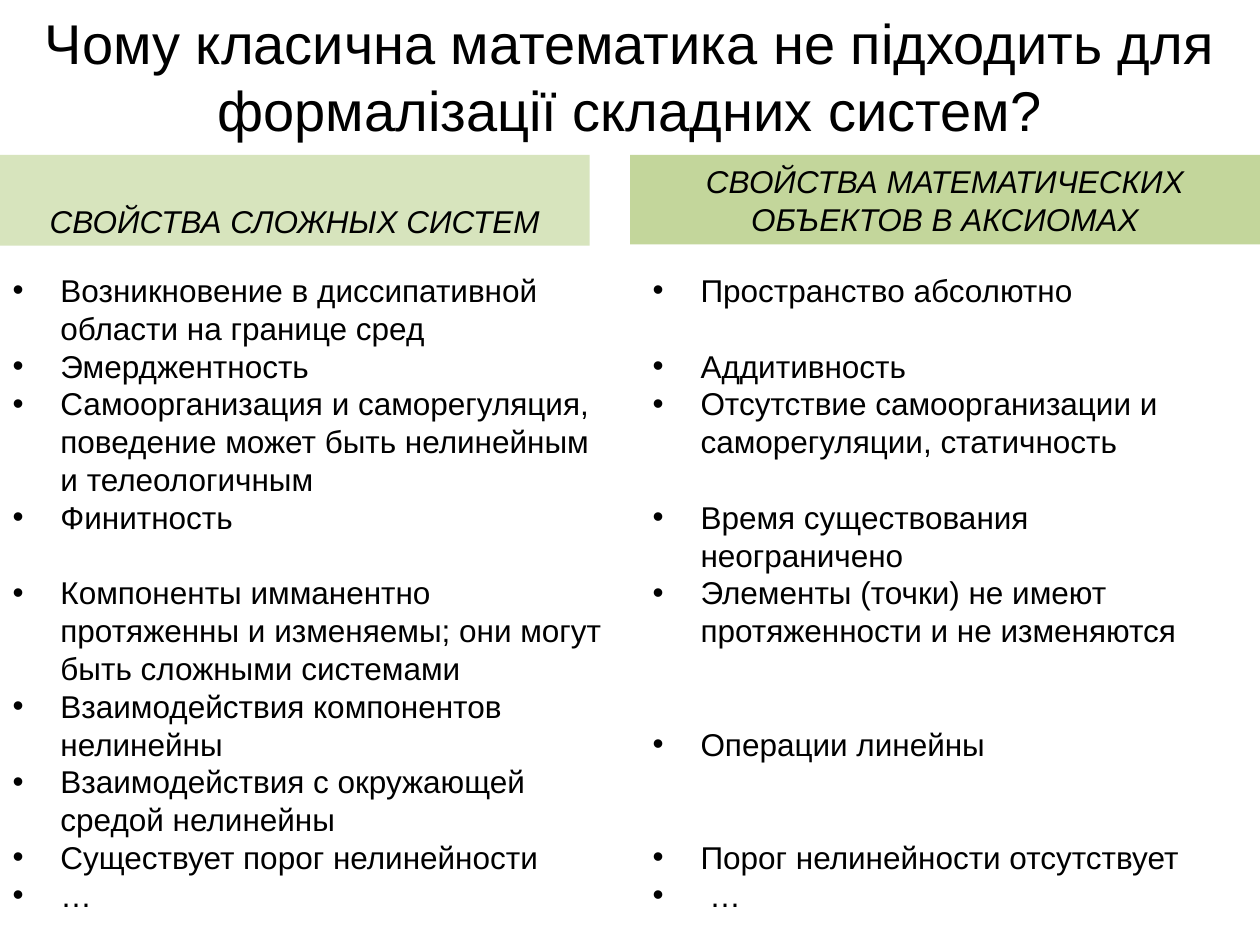
from lxml.etree import SubElement
from pptx import Presentation
from pptx.dml.color import RGBColor
from pptx.enum.text import MSO_ANCHOR as Anchor, MSO_AUTO_SIZE as AutoSize, PP_ALIGN as Align
from pptx.oxml.ns import qn
from pptx.util import Inches, Pt

TITLE = "Чому класична математика не підходить для формалізації складних систем?"
LINE_HEIGHT = 21.6
COLUMNS = [
    {
        "heading": "СВОЙСТВА СЛОЖНЫХ СИСТЕМ",
        "heading_box": (0, 1.23, 4.68, 0.72),
        "fill": "D7E4BD",
        "list_box": (0, 2.1, 4.92, 5.4),
        "items": [
            ("Возникновение в диссипативной области на границе сред", 0),
            ("Эмерджентность", 0),
            ("Самоорганизация и саморегуляция, поведение может быть нелинейным и телеологичным", 0),
            ("Финитность", 0),
            ("Компоненты имманентно протяженны и изменяемы; они могут быть сложными системами", 1),
            ("Взаимодействия компонентов нелинейны", 0),
            ("Взаимодействия с окружающей средой нелинейны", 0),
            ("Существует порог нелинейности", 0),
            ("…", 0),
        ],
    },
    {
        "heading": "СВОЙСТВА МАТЕМАТИЧЕСКИХ ОБЪЕКТОВ В АКСИОМАХ",
        "heading_box": (5, 1.23, 5, 0.71),
        "fill": "C3D69B",
        "list_box": (5.08, 2.1, 4.8, 5.4),
        "items": [
            ("Пространство абсолютно", 0),
            ("Аддитивность", 1),
            ("Отсутствие самоорганизации и саморегуляции, статичность", 0),
            ("Время существования неограничено", 1),
            ("Элементы (точки) не имеют протяженности и не изменяются", 0),
            ("Операции линейны", 2),
            ("Порог нелинейности отсутствует", 2),
            (" …", 0),
        ],
    },
]


def color(value):
    """Return the colour for a hex string."""
    return RGBColor.from_string(value)


def apply(target, values):
    """Set each attribute named in a dict of format values."""
    for name, value in values.items():
        setattr(target, name, value)


def place(shape, box, anchor):
    """Move a placeholder into its box and return its text frame."""
    sides = ("left", "top", "width", "height")
    apply(shape, dict(zip(sides, map(Inches, box))))
    frame = shape.text_frame
    apply(frame, {"word_wrap": True, "auto_size": AutoSize.NONE, "vertical_anchor": anchor})
    return frame


def write(paragraph, text, size, align, space=0, italic=False):
    """Add one formatted run to a paragraph."""
    apply(paragraph, {"alignment": align, "space_before": Pt(space)})
    run = paragraph.add_run()
    run.text = text
    apply(run.font, {"name": "Arial", "size": Pt(size), "bold": False, "italic": italic})
    run.font.color.rgb = color("000000")


def add_bullet(paragraph):
    """Give a paragraph a round bullet and a hanging indent."""
    properties = paragraph._p.get_or_add_pPr()
    properties.set("marL", str(Inches(0.38)))
    properties.set("indent", str(Inches(-0.38)))
    bullet_color = SubElement(properties, qn("a:buClr"))
    SubElement(bullet_color, qn("a:srgbClr"), val="000000")
    SubElement(properties, qn("a:buFont"), typeface="Arial")
    SubElement(properties, qn("a:buChar"), char="•")


def fill_title(shape, box):
    """Write the slide title across its box."""
    frame = place(shape, box, Anchor.MIDDLE)
    margins = {"margin_left": 0.05, "margin_top": 0, "margin_right": 0.05, "margin_bottom": 0}
    apply(frame, {name: Inches(value) for name, value in margins.items()})
    write(frame.paragraphs[0], TITLE, 32, Align.CENTER)


def fill_heading(shape, box, text, fill):
    """Write a column heading on a coloured band."""
    frame = place(shape, box, Anchor.BOTTOM)
    shape.fill.solid()
    shape.fill.fore_color.rgb = color(fill)
    write(frame.paragraphs[0], text, 18, Align.CENTER, italic=True)


def fill_list(shape, box, items):
    """Write a bulleted list, leaving the given number of lines free before each item."""
    frame = place(shape, box, Anchor.TOP)
    for index, (text, free_lines) in enumerate(items):
        paragraph = frame.add_paragraph() if index else frame.paragraphs[0]
        add_bullet(paragraph)
        write(paragraph, text, 18, Align.LEFT, free_lines * LINE_HEIGHT)


def main():
    """Build the comparison slide and save it."""
    presentation = Presentation()
    apply(presentation, {"slide_width": Inches(10), "slide_height": Inches(7.5)})
    slide = presentation.slides.add_slide(presentation.slide_layouts.get_by_name("Comparison"))
    title, *bodies = slide.placeholders
    fill_title(title, (0, 0.13, 10, 0.94))
    for column, heading, listing in zip(COLUMNS, bodies[::2], bodies[1::2]):
        fill_heading(heading, column["heading_box"], column["heading"], column["fill"])
        fill_list(listing, column["list_box"], column["items"])
    presentation.save("out.pptx")


if __name__ == "__main__":
    main()
